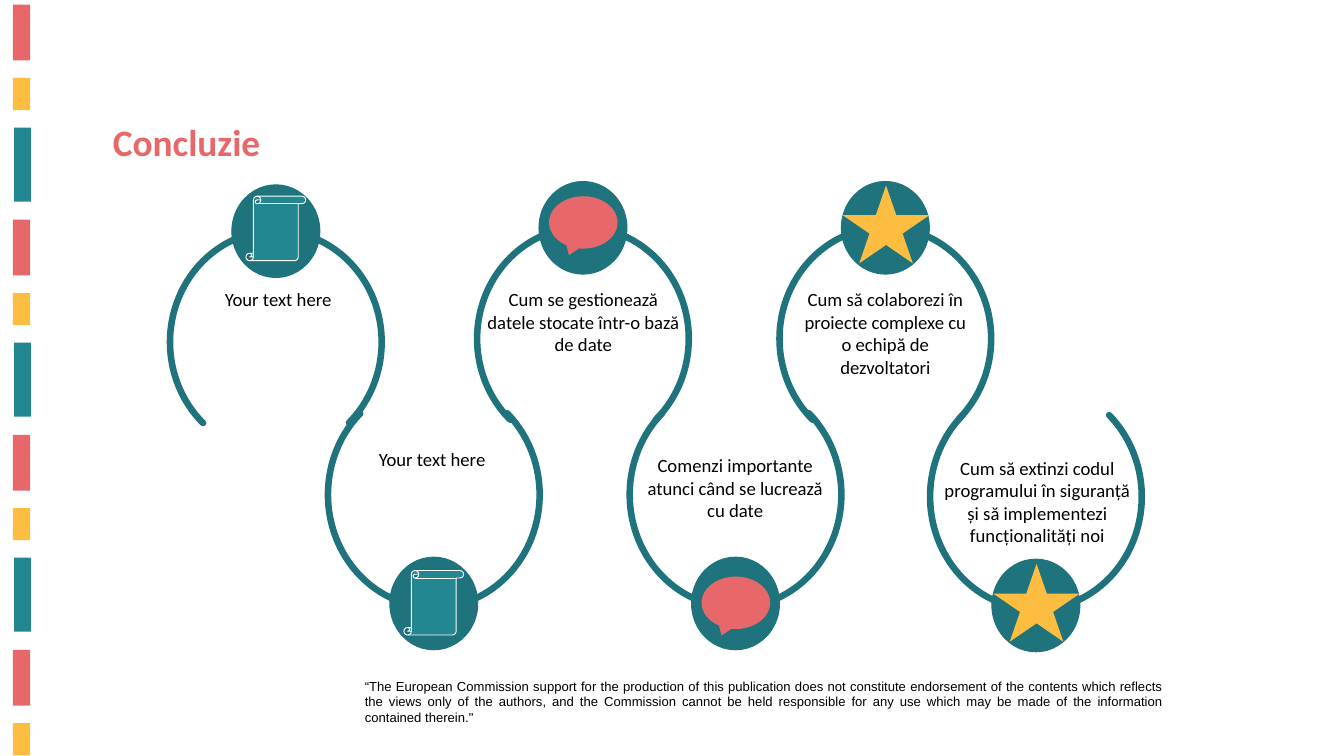
from dataclasses import dataclass

from lxml import etree
from pptx import Presentation
from pptx import util as u
from pptx.dml.color import RGBColor
from pptx.enum import shapes, text
from pptx.oxml import ns


@dataclass(frozen=True)
class Theme:
    teal: str = "238791"
    dark_teal: str = "1E737C"
    coral: str = "E8676A"
    title: str = "E7686A"
    yellow: str = "FDBD40"
    white: str = "FFFFFF"
    black: str = "000000"
    font: str = "Calibri"
    note_font: str = "Arial"
    title_size: int = 40
    body_size: int = 20
    note_size: int = 14


THEME = Theme()
KIND = shapes.MSO_SHAPE
ALIGN = text.PP_ALIGN

# Side stripes: colour, left, top, width, height
STRIPES = [
    (THEME.coral, 0.19, 0.07, 0.26, 0.83),
    (THEME.yellow, 0.19, 1.16, 0.26, 0.48),
    (THEME.teal, 0.21, 1.9, 0.25, 1.1),
]
STRIPE_COUNT, STRIPE_PERIOD = 11, 3.2

# Icons: shape, left offset in the badge, width, height, fill, line
ICONS = {
    "scroll": (KIND.VERTICAL_SCROLL, 0.21, 0.89, 0.96, THEME.teal, THEME.white),
    "speech": (KIND.OVAL_CALLOUT, 0.15, 1.02, 0.78, THEME.coral, None),
    "star": (KIND.STAR_5_POINT, 0.02, 1.29, 1.16, THEME.yellow, None),
}

# Loops: left, top, opens upward, icon, icon top, text box, wording
LOOPS = [
    (2.53, 3.43, False, "scroll", 2.92, (2.69, 4.24, 2.9, 0.44),
     "Your text here"),
    (4.88, 5.68, True, "scroll", 8.49, (4.89, 6.61, 3.08, 0.44),
     "Your text here"),
    (7.1, 3.38, False, "speech", 2.92, (7.14, 4.24, 3.08, 1.11),
     "Cum se gestionează datele stocate într-o bază de date"),
    (9.37, 5.68, True, "speech", 8.58, (9.49, 6.71, 2.9, 1.11),
     "Comenzi importante atunci când se lucrează cu date"),
    (11.6, 3.38, False, "star", 2.76, (11.8, 4.24, 2.75, 1.45),
     "Cum să colaborezi în proiecte complexe cu o echipă de dezvoltatori"),
    (13.84, 5.71, True, "star", 8.39, (13.89, 6.75, 3.09, 1.45),
     "Cum să extinzi codul programului în siguranță și să implementezi "
     "funcționalități noi"),
]

NOTE = ("“The European Commission support for the production of this "
        "publication does not constitute endorsement of the contents which "
        "reflects the views only of the authors, and the Commission cannot be "
        "held responsible for any use which may be made of the information "
        "contained therein.\"")


def add_shape(slide, kind, box, fill=None, line=None, width=1):
    shape = slide.shapes.add_shape(kind, *map(u.Inches, box))
    shape.shadow.inherit = False
    if fill:
        shape.fill.solid()
        shape.fill.fore_color.rgb = RGBColor.from_string(fill)
    else:
        shape.fill.background()
    if line:
        shape.line.color.rgb = RGBColor.from_string(line)
        shape.line.width = u.Pt(width)
    else:
        shape.line.fill.background()
    return shape


def write(shape, wording, color=THEME.black, align=ALIGN.CENTER, **formats):
    frame = shape.text_frame
    frame.word_wrap = True
    frame.auto_size = text.MSO_AUTO_SIZE.NONE
    frame.vertical_anchor = text.MSO_ANCHOR.TOP
    paragraph = frame.paragraphs[0]
    paragraph.alignment = align
    run = paragraph.add_run()
    run.text = wording
    values = {"name": THEME.font, "size": u.Pt(THEME.body_size), **formats}
    for name, value in values.items():
        setattr(run.font, name, value)
    run.font.color.rgb = RGBColor.from_string(color)


def add_text(slide, box, wording, **formats):
    write(slide.shapes.add_textbox(*map(u.Inches, box)), wording, **formats)


def add_title(slide, box, wording):
    title = slide.shapes.title
    for name, value in zip(("left", "top", "width", "height"), box):
        setattr(title, name, u.Inches(value))
    write(title, wording, color=THEME.title, align=ALIGN.LEFT,
          size=u.Pt(THEME.title_size), bold=True)


def add_stripes(slide):
    for index in range(STRIPE_COUNT):
        cycle, position = divmod(index, len(STRIPES))
        color, left, top, width, height = STRIPES[position]
        box = (left, top + cycle * STRIPE_PERIOD, width, height)
        add_shape(slide, KIND.RECTANGLE, box, color)


def add_loop(slide, left, top, opens_up, icon, icon_top, text_box, wording):
    # Open ring with round line ends
    height = 3.36 if opens_up else 3.32
    arc = add_shape(slide, KIND.ARC, (left, top, 3.15, height),
                    line=THEME.dark_teal, width=7)
    arc.adjustments[0], arc.adjustments[1] = 79.14, 28.68
    arc.rotation = 180 if opens_up else 0
    etree.SubElement(arc.line._get_or_add_ln(), ns.qn("a:round"))
    arc.line._get_or_add_ln().set("cap", "rnd")

    # Badge and its icon
    badge_left = left + 0.92
    badge_top = top + (2.61 if opens_up else -0.68)
    add_shape(slide, KIND.OVAL, (badge_left, badge_top, 1.31, 1.38),
              THEME.dark_teal, THEME.dark_teal)
    kind, offset, width, height, fill, line = ICONS[icon]
    add_shape(slide, kind, (badge_left + offset, icon_top, width, height),
              fill, line)

    add_text(slide, text_box, wording)


def main():
    presentation = Presentation()
    presentation.slide_width = u.Inches(20)
    presentation.slide_height = u.Inches(11.25)
    slide = presentation.slides.add_slide(presentation.slide_layouts[5])

    # Frame of the page
    add_stripes(slide)
    add_text(slide, (5.33, 10.04, 12.08, 0.81), NOTE, align=ALIGN.JUSTIFY,
             name=THEME.note_font, size=u.Pt(THEME.note_size))
    add_title(slide, (1.58, 1.72, 6.58, 0.77), "Concluzie")

    # Winding path of conclusions
    for loop in LOOPS:
        add_loop(slide, *loop)

    presentation.save("out.pptx")


if __name__ == "__main__":
    main()
